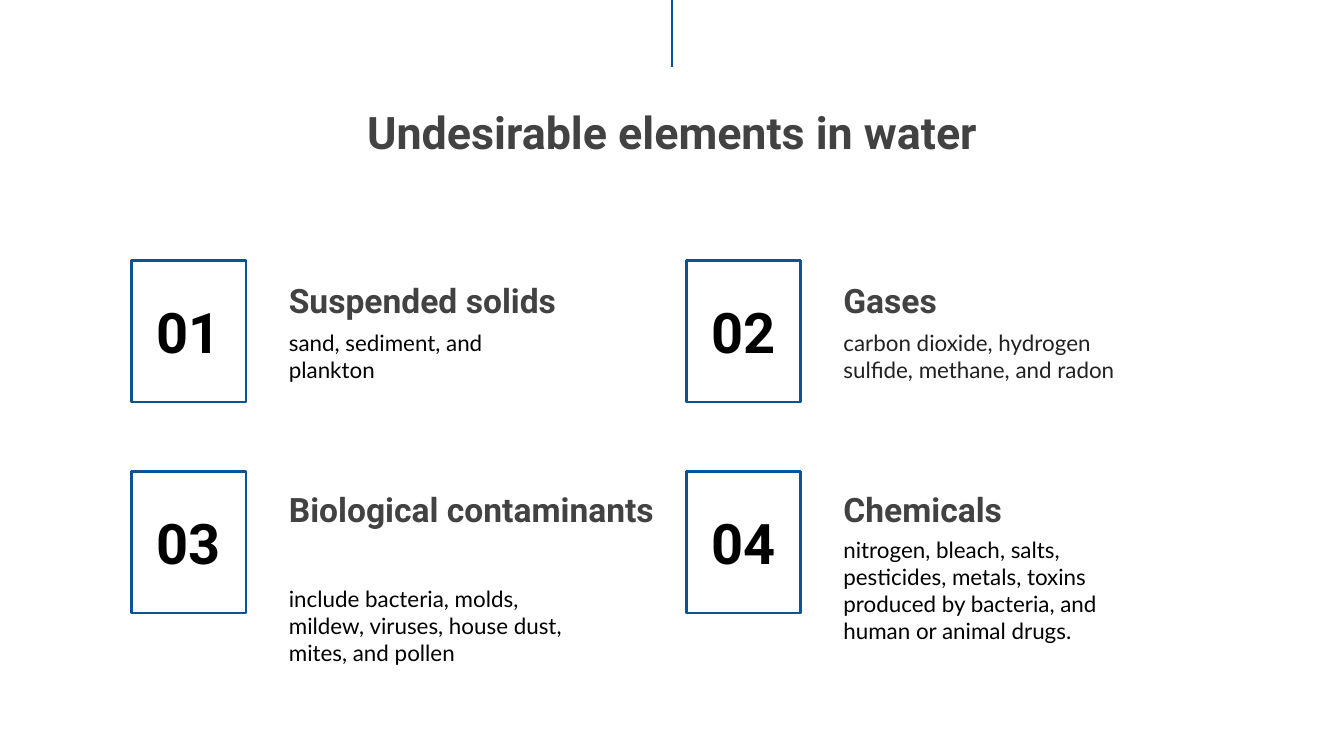
import pptx
import pptx.dml.color
import pptx.enum.shapes
import pptx.enum.text
import pptx.oxml
import pptx.util
from pptx.util import Cm

BLUE = "0B5394"
GREY = "424242"
BLACK = "000000"
ALIGN = pptx.enum.text.PP_ALIGN
ANCHOR = pptx.enum.text.MSO_ANCHOR

HEADING = {"name": "Roboto", "size": pptx.util.Pt(18), "bold": True}
NUMBER = {"name": "Roboto", "size": pptx.util.Pt(30), "bold": True}
TITLE = {"name": "Roboto", "size": pptx.util.Pt(24), "bold": True}
BODY = {"name": "Lato", "size": pptx.util.Pt(12), "bold": False}

COLUMN_LEFTS = (2.49, 12.97)
ROW_TOPS = (4.93, 8.87)
BADGE_DROPS = (0, 0.05)

# Heading, description, description colour, description drop, description box size
ELEMENTS = [
    ("Suspended solids", "sand, sediment, and plankton", BLACK, 1.04, (5.84, 2.39)),
    ("Gases", "carbon dioxide, hydrogen sulfide, methane, and radon", "212121", 1.04, (5.84, 1.65)),
    ("Biological contaminants",
     "include bacteria, molds, mildew, viruses, house dust, mites, and pollen",
     BLACK, 1.95, (6.07, 2.13)),
    ("Chemicals",
     "nitrogen, bleach, salts, pesticides, metals, toxins produced by bacteria, "
     "and human or animal drugs.",
     BLACK, 1.02, (5.84, 2.39)),
]


def set_color(color_format, hex_color):
    color_format.rgb = pptx.dml.color.RGBColor.from_string(hex_color)


def write_text(shape, text, font_values, hex_color, alignment=ALIGN.LEFT,
               anchor=ANCHOR.TOP, line_spacing=None):
    frame = shape.text_frame
    frame_values = {"word_wrap": True, "vertical_anchor": anchor}
    for side in ("left", "top", "right", "bottom"):
        frame_values["margin_" + side] = Cm(0.25)
    for name, value in frame_values.items():
        setattr(frame, name, value)
    paragraph = frame.paragraphs[0]
    paragraph.alignment = alignment
    paragraph.line_spacing = line_spacing
    run = paragraph.add_run()
    run.text = text
    for name, value in font_values.items():
        setattr(run.font, name, value)
    set_color(run.font.color, hex_color)


def add_text(slide, box, text, font_values, hex_color, **text_options):
    shape = slide.shapes.add_textbox(*map(Cm, box))
    write_text(shape, text, font_values, hex_color, **text_options)


def add_header(slide, left, top, width, height):
    """Place the title in the box, with a centred line hanging from the slide's top edge."""
    center = Cm(left + width / 2)
    line = slide.shapes.add_connector(
        pptx.enum.shapes.MSO_CONNECTOR.STRAIGHT, center, Cm(0), center, Cm(1.27))
    line.line.width = pptx.util.Pt(1.5)
    set_color(line.line.color, BLUE)
    line._element.spPr.append(pptx.oxml.parse_xml(
        '<a:effectLst xmlns:a="http://schemas.openxmlformats.org/drawingml/2006/main"/>'))
    add_text(slide, (left, top, width, height), "Undesirable elements in water",
             TITLE, GREY, alignment=ALIGN.CENTER)


def add_badge(slide, left, top, number):
    badge = slide.shapes.add_shape(
        pptx.enum.shapes.MSO_SHAPE.RECTANGLE, *map(Cm, (left, top, 2.16, 2.67)))
    badge.shadow.inherit = False
    badge.fill.background()
    badge.line.width = pptx.util.Pt(1.5)
    set_color(badge.line.color, BLUE)
    write_text(badge, f"{number:02}", NUMBER, BLACK, ALIGN.CENTER, ANCHOR.MIDDLE)


def add_element(slide, left, top, badge_drop, number, element):
    heading, description, hex_color, drop, size = element
    text_left = left + 2.72
    add_badge(slide, left, top + badge_drop, number)
    add_text(slide, (text_left, top, 7.6, 1.12), heading, HEADING, GREY, line_spacing=1.15)
    add_text(slide, (text_left, top + drop, *size), description, BODY, hex_color)


def main():
    presentation = pptx.Presentation()
    presentation.slide_width = Cm(25.4)
    presentation.slide_height = Cm(14.29)
    slide = presentation.slides.add_slide(presentation.slide_layouts[6])
    add_header(slide, 2, 1.73, 21.4, 1.5)
    for index, element in enumerate(ELEMENTS):
        row, column = divmod(index, len(COLUMN_LEFTS))
        add_element(slide, COLUMN_LEFTS[column], ROW_TOPS[row], BADGE_DROPS[row],
                    index + 1, element)
    presentation.save("out.pptx")


if __name__ == "__main__":
    main()
